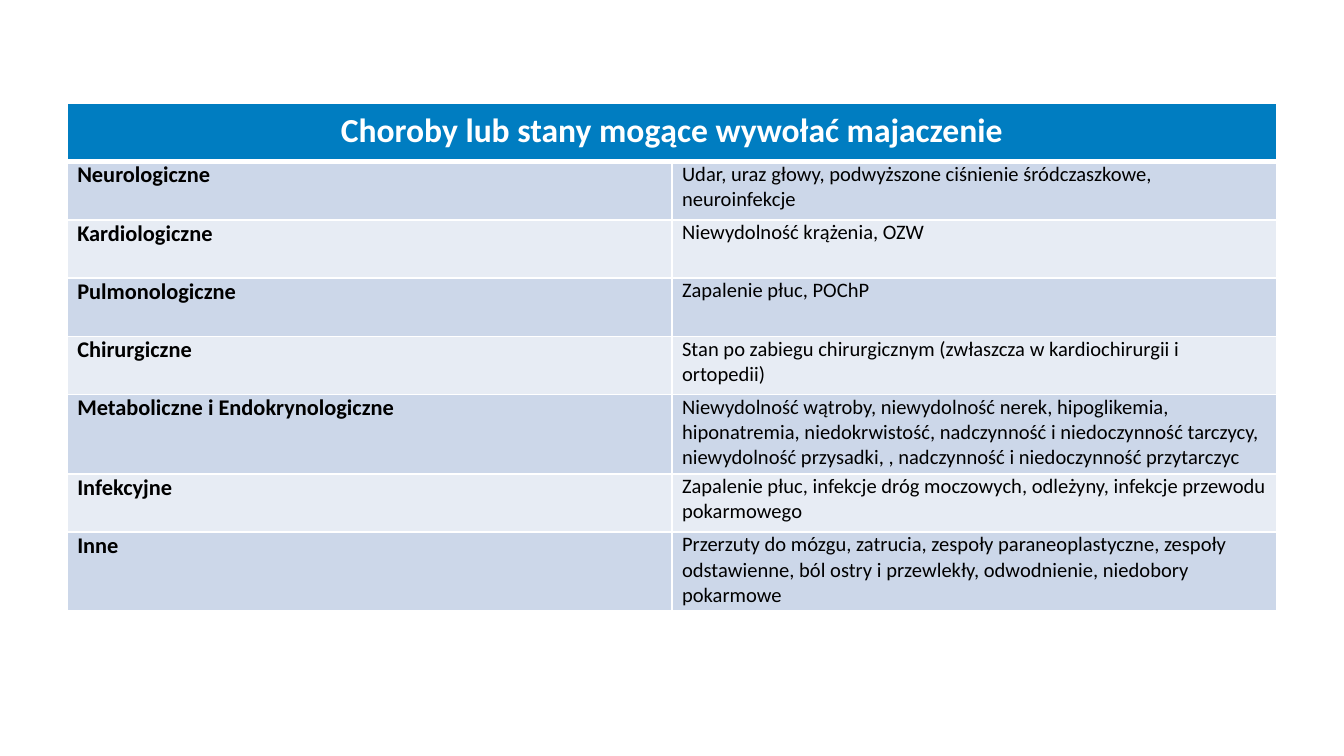
from lxml.etree import SubElement
from pptx import Presentation
from pptx.dml.color import RGBColor
from pptx.enum.text import PP_ALIGN
from pptx.oxml.ns import qn
from pptx.util import Inches, Pt

FONT = "Calibri"
WHITE, BLACK, HEADER_BLUE = "FFFFFF", "000000", "007DC1"
BANDS = ["CCD7E9", "E7ECF4"]

# Two tall rows; the other six share the remaining height
TABLE_HEIGHT = Inches(3.78)
TALL = Inches(0.59)
SHORT = (TABLE_HEIGHT - 2 * TALL) // 6
SIDE_MARGIN = Inches(0.15) // 2

TITLE = "Choroby lub stany mogące wywołać majaczenie"
# Category, causes, row height
CONDITIONS = [
    ("Neurologiczne",
     "Udar, uraz głowy, podwyższone ciśnienie śródczaszkowe, neuroinfekcje", SHORT),
    ("Kardiologiczne", "Niewydolność krążenia, OZW", SHORT),
    ("Pulmonologiczne", "Zapalenie płuc, POChP", SHORT),
    ("Chirurgiczne",
     "Stan po zabiegu chirurgicznym (zwłaszcza w kardiochirurgii i ortopedii)", SHORT),
    ("Metaboliczne i Endokrynologiczne",
     "Niewydolność wątroby, niewydolność nerek, hipoglikemia, hiponatremia, "
     "niedokrwistość, nadczynność i niedoczynność tarczycy, niewydolność przysadki, , "
     "nadczynność i niedoczynność przytarczyc", TALL),
    ("Infekcyjne",
     "Zapalenie płuc, infekcje dróg moczowych, odleżyny, infekcje przewodu pokarmowego",
     SHORT),
    ("Inne",
     "Przerzuty do mózgu, zatrucia, zespoły paraneoplastyczne, zespoły odstawienne, "
     "ból ostry i przewlekły, odwodnienie, niedobory pokarmowe", TALL),
]


def color(hex_string):
    return RGBColor.from_string(hex_string)


def set_borders(cell, top=1, bottom=1):
    properties = cell._tc.get_or_add_tcPr()
    for side, width in (("L", 1), ("R", 1), ("T", top), ("B", bottom)):
        line = SubElement(properties, qn(f"a:ln{side}"), w=str(Pt(width)))
        fill = SubElement(line, qn("a:solidFill"))
        SubElement(fill, qn("a:srgbClr"), val=WHITE)


def style_cell(cell, fill, top=1, bottom=1):
    set_borders(cell, top, bottom)
    cell.fill.solid()
    cell.fill.fore_color.rgb = color(fill)


def write_cell(cell, text, size, text_color, bold):
    para = cell.text_frame.paragraphs[0]
    span = para.add_run()
    span.text = text
    span.font.name = FONT
    span.font.size = Pt(size)
    span.font.bold = bold
    span.font.color.rgb = color(text_color)
    return para


def add_header(table):
    table.rows[0].height = SHORT
    for cell in table.rows[0].cells:
        style_cell(cell, HEADER_BLUE, bottom=3)
    title = table.cell(0, 0)
    title.merge(table.cell(0, 1))
    write_cell(title, TITLE, 18, WHITE, True).alignment = PP_ALIGN.CENTER


def add_condition(table, index, category, causes, height):
    table.rows[index].height = height
    for column, (text, size) in enumerate([(category, 12), (causes, 11)]):
        cell = table.cell(index, column)
        cell.margin_left = cell.margin_right = SIDE_MARGIN
        cell.margin_top = cell.margin_bottom = 0
        style_cell(cell, BANDS[(index - 1) % 2], top=3 if index == 1 else 1)
        write_cell(cell, text, size, BLACK, column == 0)


def main():
    # Widescreen page, 16:9
    deck = Presentation()
    deck.slide_width = Inches(10)
    deck.slide_height = deck.slide_width * 9 // 16
    page = deck.slides.add_slide(deck.slide_layouts[6])

    # Table of conditions, two equal columns
    frame = page.shapes.add_table(len(CONDITIONS) + 1, 2, Inches(0.5), Inches(0.77),
                                  Inches(9), TABLE_HEIGHT)
    table = frame.table
    add_header(table)
    for index, condition in enumerate(CONDITIONS, start=1):
        add_condition(table, index, *condition)

    deck.save("out.pptx")


if __name__ == "__main__":
    main()
